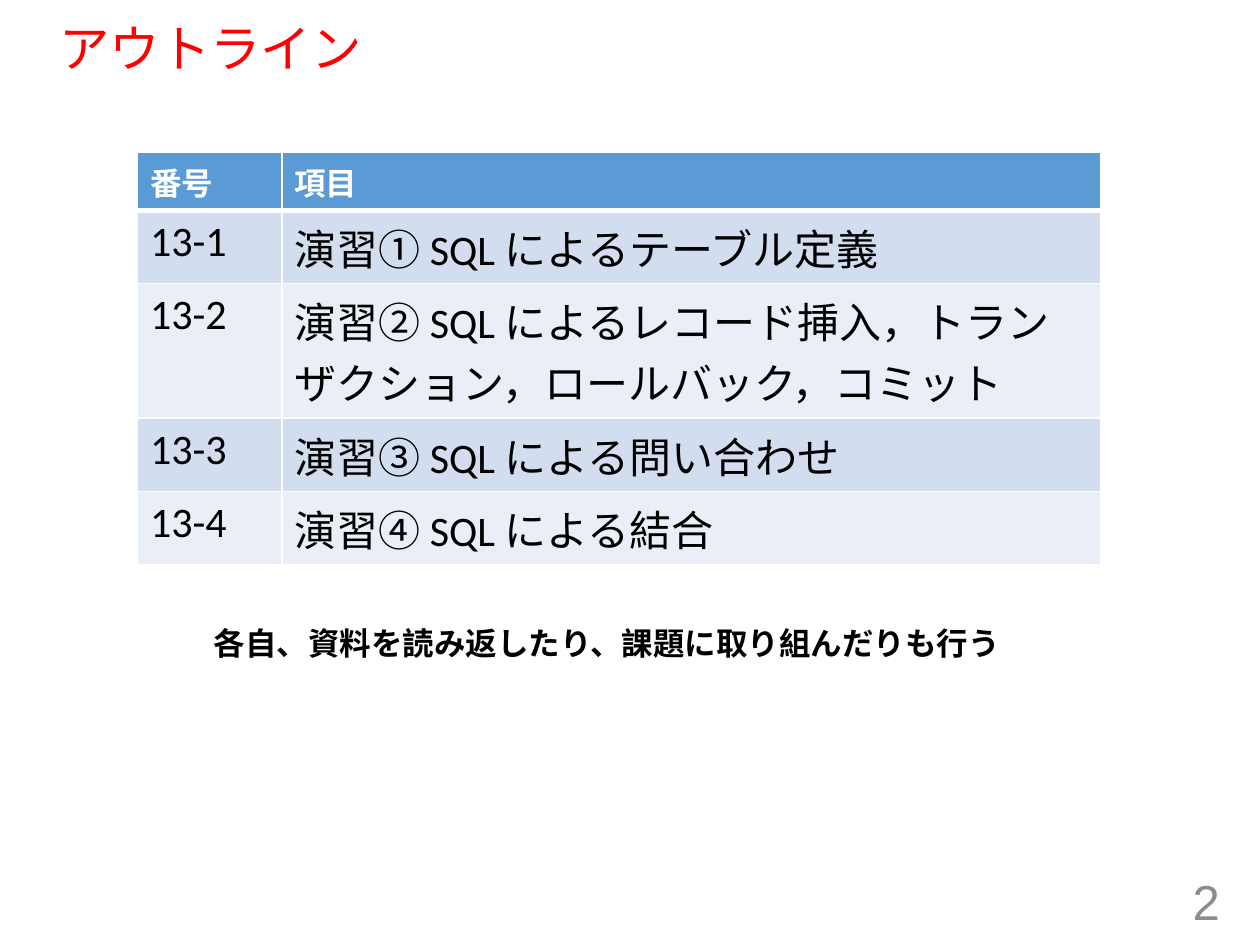
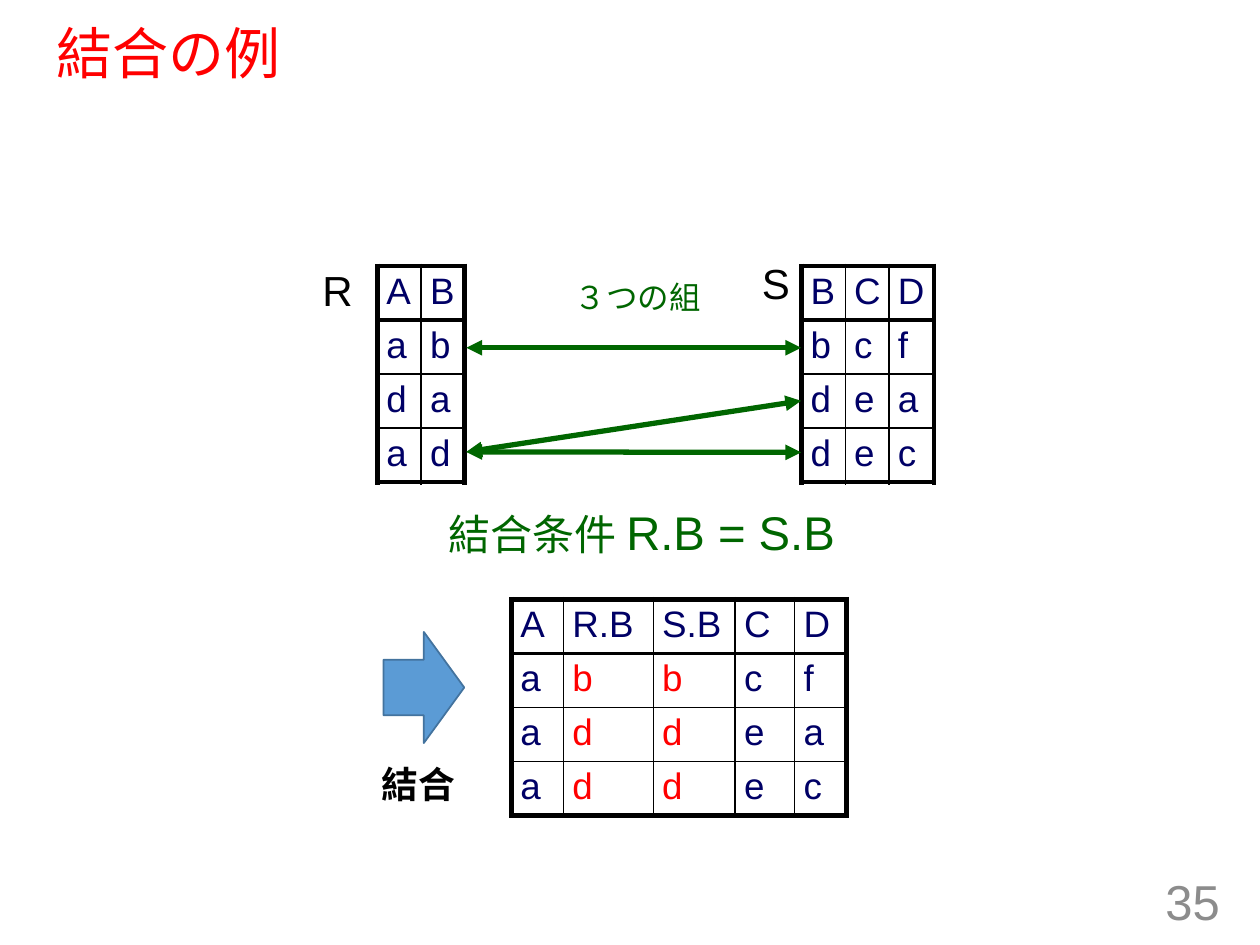
import dataclasses
import typing

import lxml.etree
import pptx
import pptx.dml.color
import pptx.enum.shapes
import pptx.enum.text
import pptx.oxml.ns
import pptx.util

Cm = pptx.util.Cm
Pt = pptx.util.Pt
qn = pptx.oxml.ns.qn
PP_ALIGN = pptx.enum.text.PP_ALIGN
ANCHOR = pptx.enum.text.MSO_ANCHOR

COLORS = {
    "title": "FF0000", "number": "8C8C8C", "text": "000000", "white": "FFFFFF",
    "header": "5B9BD5", "band_dark": "D2DEEF", "band_light": "EAEFF7",
    "relation": "000066", "match": "FF0000", "green": "006600",
    "arrow": "5B9BD5", "arrow_line": "43739E",
}
TITLE_ONLY = 5
RELATION_ROW = 1.07


@dataclasses.dataclass
class Label:
    """A text box; lengths in centimetres, sizes in points."""
    text: str
    left: float
    top: float
    width: float
    height: float
    size: float
    color: str = "text"
    font: str = "Arial"
    bold: bool = False
    wrap: bool = True
    align: typing.Any = PP_ALIGN.LEFT
    anchor: typing.Any = ANCHOR.TOP


@dataclasses.dataclass
class Relation:
    """A relation drawn as a ruled grid; each row is a string of values."""
    left: float
    top: float
    columns: list[float]
    rows: list[str]
    matched: tuple[int, ...] = ()


# Shared helpers
def rgb(name: str) -> pptx.dml.color.RGBColor:
    return pptx.dml.color.RGBColor.from_string(COLORS[name])


def style_font(font, size: float, color: str, name: str = "Arial", bold: bool = False) -> None:
    font.size = Pt(size)
    font.name = name
    font.bold = bold
    font.color.rgb = rgb(color)


def add_label(page, label: Label):
    box = page.shapes.add_textbox(Cm(label.left), Cm(label.top), Cm(label.width), Cm(label.height))
    frame = box.text_frame
    frame.word_wrap = label.wrap
    frame.vertical_anchor = label.anchor
    para = frame.paragraphs[0]
    para.text = label.text
    para.alignment = label.align
    style_font(para.font, label.size, label.color, label.font, label.bold)
    return para


def add_page(deck, title: str, left: float, top: float, size: float, number: int):
    page = deck.slides.add_slide(deck.slide_layouts[TITLE_ONLY])
    box = page.shapes.title
    box.left, box.top, box.width, box.height = Cm(left), Cm(top), Cm(23.5), Cm(1.3)
    frame = box.text_frame
    frame.auto_size = pptx.enum.text.MSO_AUTO_SIZE.NONE
    frame.vertical_anchor = ANCHOR.MIDDLE
    para = frame.paragraphs[0]
    para.text = title
    para.alignment = PP_ALIGN.LEFT
    para.line_spacing = 0.9
    style_font(para.font, size, "title")
    add_label(page, Label(str(number), 19.12, 17.65, 5.72, 1.02, 28, "number",
                          align=PP_ALIGN.RIGHT, anchor=ANCHOR.MIDDLE))
    return page


def set_borders(cell, color: str, left: float, right: float, top: float, bottom: float) -> None:
    properties = cell._tc.get_or_add_tcPr()
    widths = {"a:lnL": left, "a:lnR": right, "a:lnT": top, "a:lnB": bottom}
    for index, (tag, width) in enumerate(widths.items()):
        line = lxml.etree.Element(qn(tag), w=str(Pt(width)))
        fill = lxml.etree.SubElement(line, qn("a:solidFill"))
        lxml.etree.SubElement(fill, qn("a:srgbClr"), val=COLORS[color])
        properties.insert(index, line)


def add_grid(page, left: float, top: float, columns: list[float], heights: list[float]):
    table = page.shapes.add_table(len(heights), len(columns), Cm(left), Cm(top),
                                  Cm(sum(columns)), Cm(sum(heights))).table
    table.first_row = table.horz_banding = False
    for column, width in zip(table.columns, columns):
        column.width = Cm(width)
    for row, height in zip(table.rows, heights):
        row.height = Cm(height)
    return table


def write_cell(cell, text: str, size: float, color: str, font: str, bold: bool = False) -> None:
    para = cell.text_frame.paragraphs[0]
    para.text = text
    style_font(para.font, size, color, font, bold)


def add_relation(page, relation: Relation) -> None:
    rows = [row.split() for row in relation.rows]
    last_row, last_column = len(rows) - 1, len(relation.columns) - 1
    table = add_grid(page, relation.left, relation.top, relation.columns,
                     [RELATION_ROW] * len(rows))
    for r, row in enumerate(rows):
        for c, value in enumerate(row):
            cell = table.cell(r, c)
            cell.margin_left = cell.margin_right = Cm(0.18)
            cell.margin_top = cell.margin_bottom = Cm(0.1)
            cell.fill.background()
            matched = r > 0 and c in relation.matched
            write_cell(cell, value, 21, "match" if matched else "relation", "Arial")
            set_borders(cell, "text",
                        left=3 if c == 0 else 1,
                        right=3 if c == last_column else 1,
                        top={0: 3, 1: 2.25}.get(r, 1),
                        bottom={0: 2.25, last_row: 3}.get(r, 1))


def add_double_arrow(page, x1: float, y1: float, x2: float, y2: float) -> None:
    link = page.shapes.add_connector(pptx.enum.shapes.MSO_CONNECTOR.STRAIGHT,
                                     Cm(x1), Cm(y1), Cm(x2), Cm(y2))
    link.line.color.rgb = rgb("green")
    link.line.width = Pt(3)
    line = link.line._get_or_add_ln()
    for tag in ("a:headEnd", "a:tailEnd"):
        lxml.etree.SubElement(line, qn(tag), type="triangle")
    lxml.etree.SubElement(link._element.spPr, qn("a:effectLst"))


# Slide: outline
def build_outline(deck) -> None:
    page = add_page(deck, "アウトライン", 0.94, 0.38, 28.8, 2)
    topics = [
        ("番号", "項目"),
        ("13-1", "演習① SQL によるテーブル定義"),
        ("13-2", "演習② SQL によるレコード挿入，トランザクション，ロールバック，コミット"),
        ("13-3", "演習③ SQL による問い合わせ"),
        ("13-4", "演習④ SQL による結合"),
    ]
    table = add_grid(page, 2.77, 3.07, [2.91, 16.5], [1.17, 1.48, 2.71, 1.48, 1.48])
    for r, topic in enumerate(topics):
        header = r == 0
        band = "header" if header else ("band_light", "band_dark")[r % 2]
        for c, text in enumerate(topic):
            cell = table.cell(r, c)
            cell.fill.solid()
            cell.fill.fore_color.rgb = rgb(band)
            write_cell(cell, text, 18 if header else 24, "white" if header else "text",
                       "Calibri", header)
            set_borders(cell, "white", 1, 1, 3 if r == 1 else 1, 3 if header else 1)
    add_label(page, Label("各自、資料を読み返したり、課題に取り組んだりも行う", 4.06, 11.66, 16.54, 1.8,
                          18, font="Calibri", bold=True, anchor=ANCHOR.BOTTOM))


# Slide: join example
def build_join(deck) -> None:
    page = add_page(deck, "結合の例", 0.89, 0.48, 32, 35)
    table_r = Relation(7.61, 5.36, [0.88] * 2, ["A B", "a b", "d a", "a d"])
    table_s = Relation(16.16, 5.36, [0.88, 0.88, 0.91], ["B C D", "b c f", "d e a", "d e c"])
    joined = Relation(10.31, 12.08, [1.05, 1.81, 1.65, 1.2, 1.04],
                      ["A R.B S.B C D", "a b b c f", "a d d e a", "a d d e c"], (1, 2))
    for relation in (table_r, table_s, joined):
        add_relation(page, relation)

    # Matching rows of R and S
    for y_r, y_s in ((7.01, 7.01), (9.11, 9.12), (9.11, 8.08)):
        add_double_arrow(page, 9.4, y_r, 16.15, y_s)

    # Labels and join condition
    for label in (
        Label("R", 6.25, 5.21, 1.5, 1.27, 24),
        Label("S", 15.11, 5.06, 1.5, 1.27, 24),
        Label("３つの組", 11.34, 5.48, 3.07, 1.02, 18, "green", wrap=False),
        Label("結合", 7.44, 15.23, 2.01, 1.14, 21, bold=True, wrap=False),
    ):
        add_label(page, label)
    condition = add_label(page, Label("結合条件 ", 8.8, 10.03, 12.6, 1.42, 24, "green"))
    span = condition.add_run()
    span.text = "R.B = S.B"
    span.font.size = Pt(27)

    # Block arrow to the joined table
    arrow = page.shapes.add_shape(pptx.enum.shapes.MSO_SHAPE.RIGHT_ARROW,
                                  Cm(7.73), Cm(12.74), Cm(1.63), Cm(2.24))
    arrow.shadow.inherit = False
    arrow.fill.solid()
    arrow.fill.fore_color.rgb = rgb("arrow")
    arrow.line.color.rgb = rgb("arrow_line")
    arrow.line.width = Pt(1)


def main() -> None:
    deck = pptx.Presentation()
    deck.slide_width, deck.slide_height = Cm(25.4), Cm(19.05)
    build_outline(deck)
    build_join(deck)
    deck.save("out.pptx")


if __name__ == "__main__":
    main()
